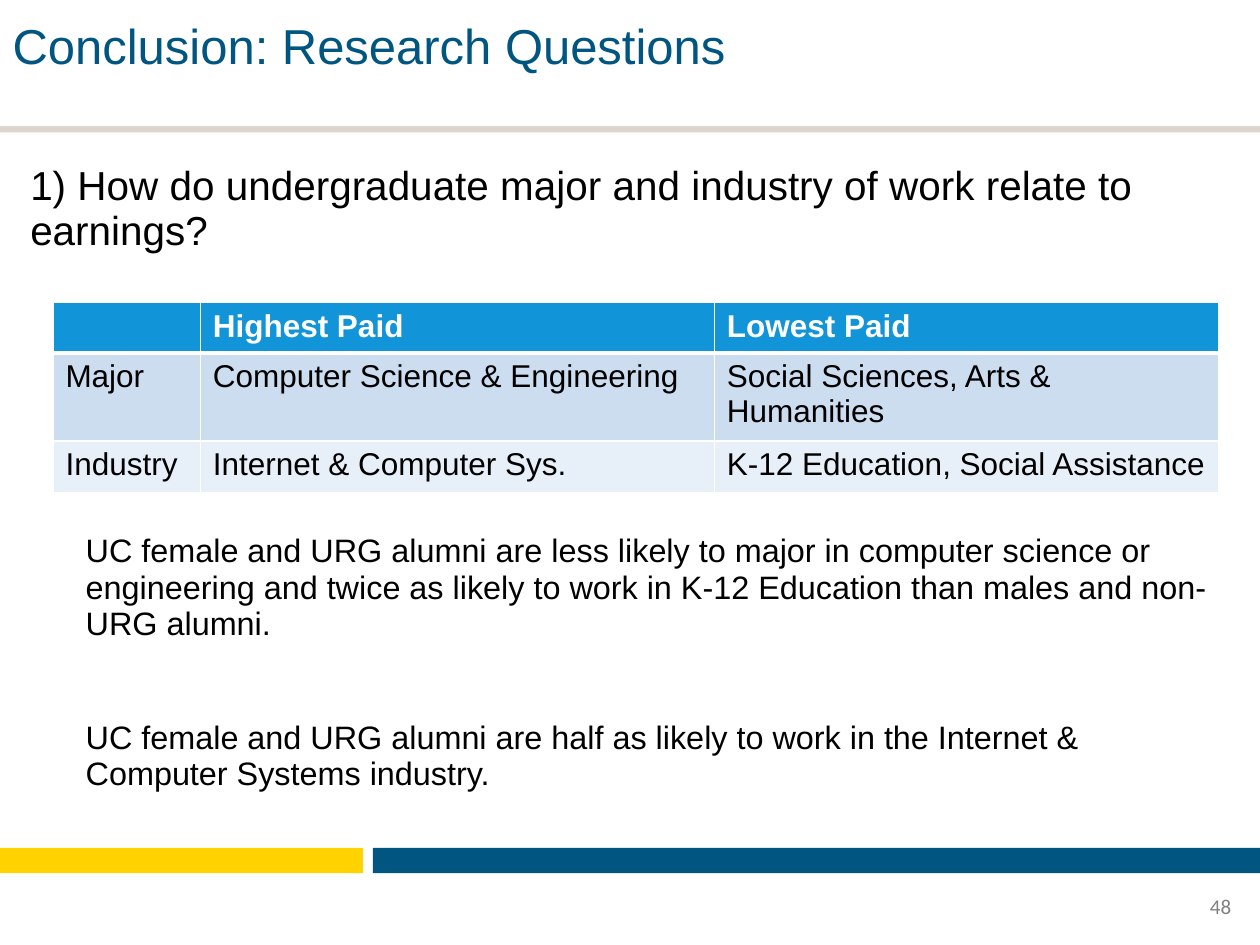
from dataclasses import dataclass

from lxml import etree
from pptx import Presentation
from pptx.dml.color import RGBColor
from pptx.enum import shapes, text
from pptx.oxml import ns
from pptx.util import Inches, Pt


@dataclass(frozen=True)
class Theme:
    font: str = "Arial"
    number_font: str = "Calibri"
    navy: str = "005581"
    gold: str = "FFD200"
    sand: str = "DBD5CD"
    header: str = "1295D8"
    bands: tuple = ("CCDDF0", "E7EFF8")
    white: str = "FFFFFF"
    black: str = "000000"
    grey: str = "808080"
    title_size: float = 28
    question_size: float = 23.1
    finding_size: float = 18.5
    table_size: float = 18
    number_size: float = 12
    line_spacing: float = 0.94


class SlideBuilder:
    def __init__(self, slide, theme):
        self.slide = slide
        self.theme = theme

    def style(self, paragraph, size, color, bold=False, font=None):
        paragraph.font.name = font or self.theme.font
        paragraph.font.size = Pt(size)
        paragraph.font.bold = bold
        paragraph.font.color.rgb = RGBColor.from_string(color)

    def place(self, shape, left, top, width, height):
        shape.left, shape.top = Inches(left), Inches(top)
        shape.width, shape.height = Inches(width), Inches(height)

    def bar(self, left, top, width, height, color):
        bar = self.slide.shapes.add_shape(
            shapes.MSO_SHAPE.RECTANGLE,
            Inches(left), Inches(top), Inches(width), Inches(height))
        bar.shadow.inherit = False
        bar.fill.solid()
        bar.fill.fore_color.rgb = RGBColor.from_string(color)
        bar.line.fill.background()

    def title(self, wording):
        title = self.slide.shapes.title
        self.place(title, 0, 0.07, 10, 0.57)
        frame = title.text_frame
        frame.text = wording
        frame.auto_size = text.MSO_AUTO_SIZE.NONE
        frame.vertical_anchor = text.MSO_ANCHOR.BOTTOM
        heading = frame.paragraphs[0]
        heading.alignment = text.PP_ALIGN.LEFT
        self.style(heading, self.theme.title_size, self.theme.navy)

    def body(self, question, findings):
        """Write the question, then findings given as (space before, wording)."""
        body = self.slide.placeholders[1]
        self.place(body, 0.14, 1.25, 9.7, 5.27)
        frame = body.text_frame
        frame.auto_size = text.MSO_AUTO_SIZE.NONE
        self.body_paragraph(frame.paragraphs[0], question, 0, 0, self.theme.question_size)
        for space, finding in findings:
            self.body_paragraph(frame.add_paragraph(), finding, 1, space,
                                self.theme.finding_size)

    def body_paragraph(self, paragraph, wording, level, space, size):
        paragraph.text = wording
        paragraph.level = level
        properties = paragraph._p.get_or_add_pPr()
        properties.set("marL", str(Inches(0.44 * level)))
        properties.set("indent", "0")
        etree.SubElement(properties, ns.qn("a:buNone"))
        paragraph.line_spacing = self.theme.line_spacing
        paragraph.space_before = Pt(space)
        paragraph.space_after = Pt(0)
        self.style(paragraph, size, self.theme.black)

    def table(self, rows, left, top, widths, heights):
        table = self.slide.shapes.add_table(
            len(rows), len(widths), Inches(left), Inches(top),
            Inches(sum(widths)), Inches(sum(heights))).table
        for column, width in zip(table.columns, widths):
            column.width = Inches(width)
        for row, height in zip(table.rows, heights):
            row.height = Inches(height)
        for r, wordings in enumerate(rows):
            for c, wording in enumerate(wordings):
                self.cell(table.cell(r, c), wording, r)

    def cell(self, cell, wording, row):
        theme = self.theme
        is_header = row == 0
        cell.text = wording
        self.borders(cell, top=3 if row == 1 else 1, bottom=3 if is_header else 1)
        cell.fill.solid()
        fill = theme.header if is_header else theme.bands[(row - 1) % 2]
        cell.fill.fore_color.rgb = RGBColor.from_string(fill)
        self.style(cell.text_frame.paragraphs[0], theme.table_size,
                   theme.white if is_header else theme.black, is_header)

    def borders(self, cell, top, bottom):
        properties = cell._tc.get_or_add_tcPr()
        for side, width in (("L", 1), ("R", 1), ("T", top), ("B", bottom)):
            line = etree.SubElement(properties, ns.qn(f"a:ln{side}"), w=str(Pt(width)))
            fill = etree.SubElement(line, ns.qn("a:solidFill"))
            etree.SubElement(fill, ns.qn("a:srgbClr"), val=self.theme.white)

    def page_number(self, number):
        box = self.slide.shapes.add_textbox(
            Inches(7.54), Inches(6.99), Inches(2.33), Inches(0.4))
        frame = box.text_frame
        frame.word_wrap = True
        frame.vertical_anchor = text.MSO_ANCHOR.MIDDLE
        frame.text = number
        paragraph = frame.paragraphs[0]
        paragraph.alignment = text.PP_ALIGN.RIGHT
        self.style(paragraph, self.theme.number_size, self.theme.grey,
                   font=self.theme.number_font)


def main():
    deck = Presentation()
    deck.slide_width, deck.slide_height = Inches(10), Inches(7.5)
    theme = Theme()
    builder = SlideBuilder(deck.slides.add_slide(deck.slide_layouts[1]), theme)

    builder.bar(2.96, 6.73, 7.04, 0.2, theme.navy)
    builder.bar(0, 6.73, 2.88, 0.2, theme.gold)
    builder.bar(0, 1, 10, 0.05, theme.sand)
    builder.title("Conclusion: Research Questions")
    builder.page_number("48")
    builder.body(
        "1) How do undergraduate major and industry of work relate to earnings?",
        [(159, "UC female and URG alumni are less likely to major in computer science "
               "or engineering and twice as likely to work in K-12 Education than "
               "males and non-URG alumni."),
         (44, "UC female and URG alumni are half as likely to work in the Internet & "
              "Computer Systems industry.")])
    builder.table(
        [("", "Highest Paid", "Lowest Paid"),
         ("Major", "Computer Science & Engineering", "Social Sciences, Arts & Humanities"),
         ("Industry", "Internet & Computer Sys.", "K-12 Education, Social Assistance")],
        0.42, 2.4, widths=(1.17, 4.08, 4), heights=(0.37, 0.66, 0.41))
    deck.save("out.pptx")


if __name__ == "__main__":
    main()
